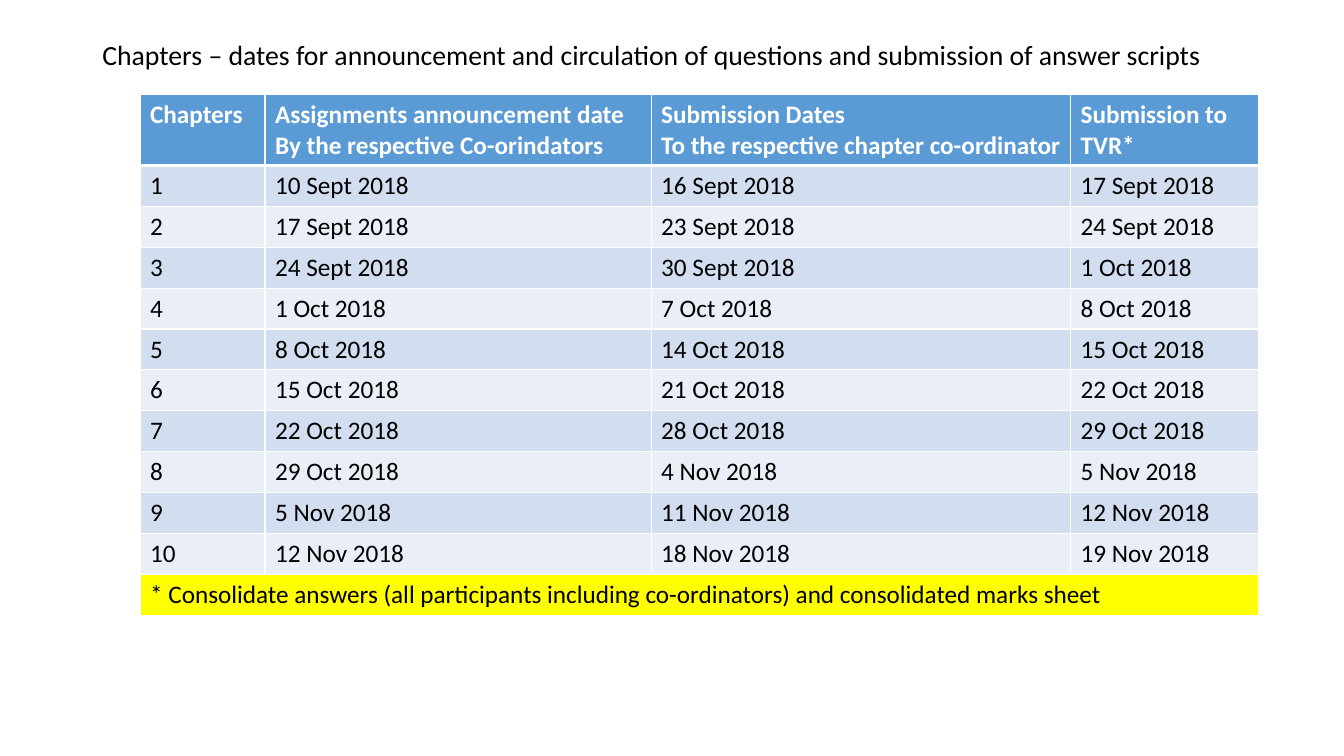
from dataclasses import dataclass

from lxml import etree
from pptx import Presentation
from pptx.dml.color import RGBColor
from pptx.enum import text
from pptx.oxml import ns
from pptx.util import Cm, Pt


@dataclass(frozen=True)
class Theme:
    font: str = "Calibri"
    title_size: float = 19.8
    table_size: float = 18
    ink: str = "000000"
    white: str = "FFFFFF"
    header: str = "5B9BD5"
    bands: tuple = ("D2DEEF", "EAEFF7")
    note: str = "FFFF00"
    thin: float = 1
    thick: float = 3


THEME = Theme()
TITLE = "Chapters – dates for announcement and circulation of questions and submission of answer scripts"
HEADINGS = (
    "Chapters",
    "Assignments announcement date\nBy the respective Co-orindators",
    "Submission Dates\nTo the respective chapter co-ordinator",
    "Submission to TVR*",
)
SCHEDULE = (
    ("10 Sept 2018", "16 Sept 2018", "17 Sept 2018"),
    ("17 Sept 2018", "23 Sept 2018", "24 Sept 2018"),
    ("24 Sept 2018", "30 Sept 2018", "1 Oct 2018"),
    ("1 Oct 2018", "7 Oct 2018", "8 Oct 2018"),
    ("8 Oct 2018", "14 Oct 2018", "15 Oct 2018"),
    ("15 Oct 2018", "21 Oct 2018", "22 Oct 2018"),
    ("22 Oct 2018", "28 Oct 2018", "29 Oct 2018"),
    ("29 Oct 2018", "4 Nov 2018", "5 Nov 2018"),
    ("5 Nov 2018", "11 Nov 2018", "12 Nov 2018"),
    ("12 Nov 2018", "18 Nov 2018", "19 Nov 2018"),
)
NOTE = "* Consolidate answers (all participants including co-ordinators) and consolidated marks sheet"
COLUMN_WIDTHS = (3.15, 9.73, 10.57, 4.75)
HEADER_HEIGHT = 1.78
ROW_HEIGHT = 1.03


def write_text(frame, content, size, color, bold=False):
    frame.text = content
    for paragraph in frame.paragraphs:
        paragraph.font.name = THEME.font
        paragraph.font.size = Pt(size)
        paragraph.font.bold = bold
        paragraph.font.color.rgb = RGBColor.from_string(color)


def add_title(slide):
    shape = slide.shapes.add_textbox(Cm(2.33), Cm(1.02), Cm(29.21), Cm(0.79))
    frame = shape.text_frame
    frame.word_wrap = True
    frame.vertical_anchor = text.MSO_ANCHOR.MIDDLE
    write_text(frame, TITLE, THEME.title_size, THEME.ink)
    frame.paragraphs[0].line_spacing = 0.9


def add_borders(cell, top, bottom):
    properties = cell._tc.get_or_add_tcPr()
    widths = {"lnL": THEME.thin, "lnR": THEME.thin, "lnT": top, "lnB": bottom}
    for side, width in widths.items():
        line = etree.SubElement(properties, ns.qn(f"a:{side}"), w=str(Pt(width)))
        fill = etree.SubElement(line, ns.qn("a:solidFill"))
        etree.SubElement(fill, ns.qn("a:srgbClr"), val=THEME.white)


def fill_cell(cell, content, fill, color=THEME.ink, bold=False, top=THEME.thin, bottom=THEME.thin):
    add_borders(cell, top, bottom)
    cell.fill.solid()
    cell.fill.fore_color.rgb = RGBColor.from_string(fill)
    write_text(cell.text_frame, content, THEME.table_size, color, bold)


def add_schedule(slide):
    row_count = len(SCHEDULE) + 2
    height = HEADER_HEIGHT + ROW_HEIGHT * (row_count - 1)
    table = slide.shapes.add_table(
        row_count, len(HEADINGS), Cm(3.53), Cm(2.39), Cm(sum(COLUMN_WIDTHS)), Cm(height)
    ).table
    table.first_row = False
    table.horz_banding = False
    for column, width in zip(table.columns, COLUMN_WIDTHS):
        column.width = Cm(width)
    for row in table.rows:
        row.height = Cm(ROW_HEIGHT)
    table.rows[0].height = Cm(HEADER_HEIGHT)

    for column, heading in enumerate(HEADINGS):
        fill_cell(table.cell(0, column), heading, THEME.header, THEME.white, True, bottom=THEME.thick)
    for chapter, dates in enumerate(SCHEDULE, 1):
        band = THEME.bands[(chapter - 1) % 2]
        top = THEME.thick if chapter == 1 else THEME.thin
        for column, content in enumerate((str(chapter), *dates)):
            fill_cell(table.cell(chapter, column), content, band, top=top)

    note_cell = table.cell(row_count - 1, 0)
    note_cell.merge(table.cell(row_count - 1, len(HEADINGS) - 1))
    fill_cell(note_cell, NOTE, THEME.note)


def main():
    presentation = Presentation()
    presentation.slide_width = Cm(33.87)
    presentation.slide_height = Cm(19.05)
    slide = presentation.slides.add_slide(presentation.slide_layouts[6])
    add_title(slide)
    add_schedule(slide)
    presentation.save("out.pptx")


if __name__ == "__main__":
    main()
